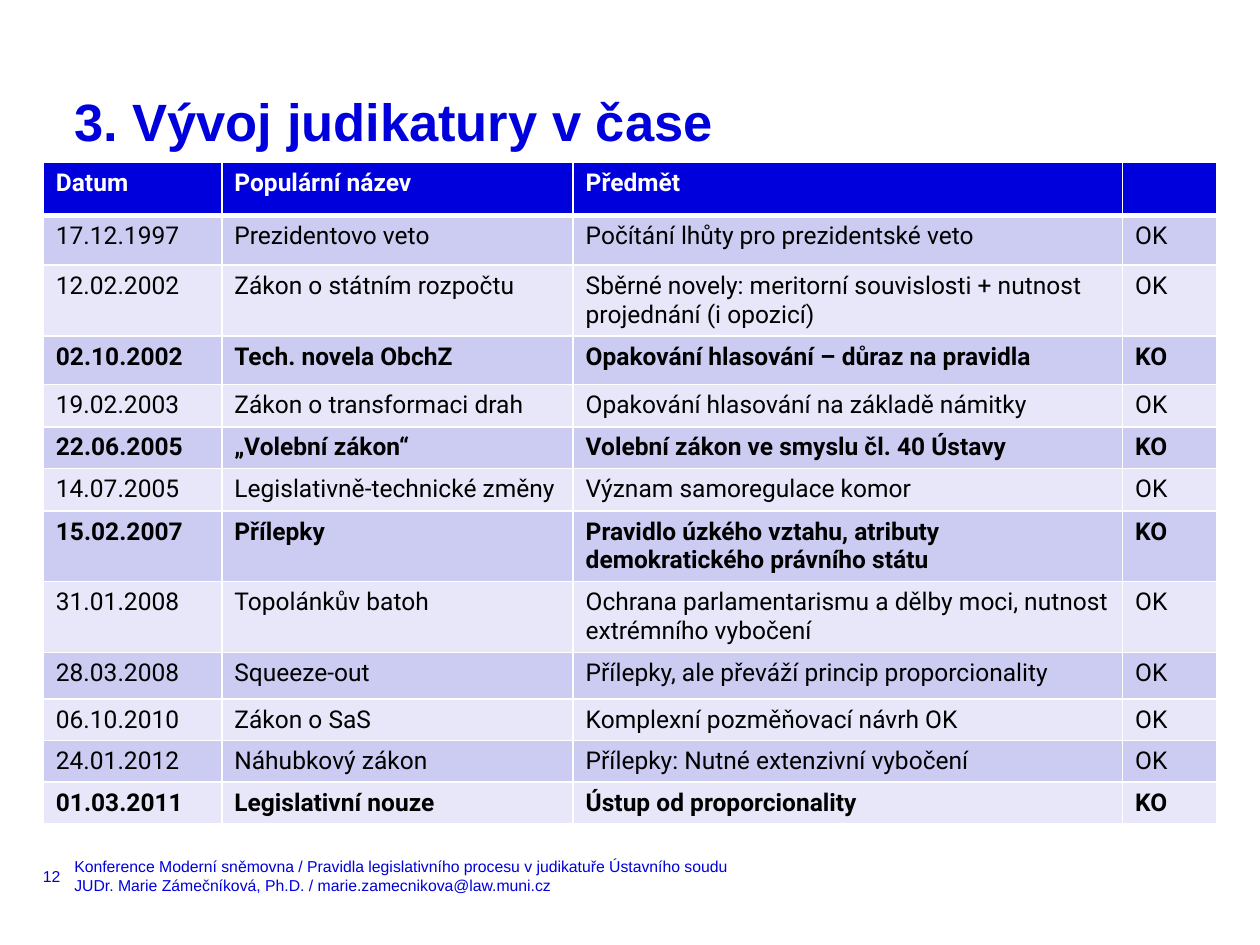
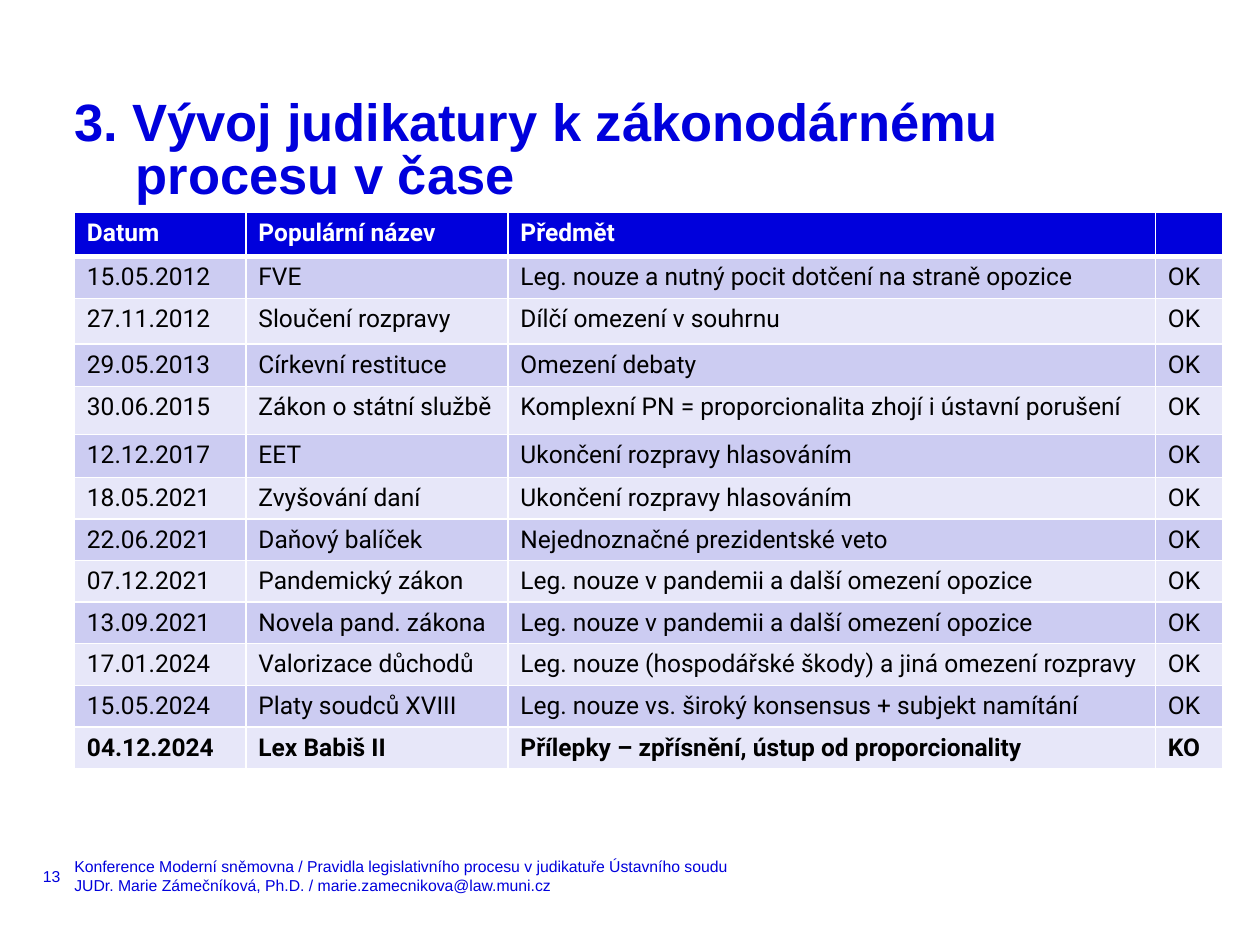
"""Build two slides that list case law on the legislative process in dated tables."""
from lxml import etree
from pptx import Presentation
from pptx.dml.color import RGBColor
from pptx.enum import text
from pptx.oxml import ns
from pptx.util import Pt

BLUE, WHITE, BLACK = "0000DC", "FFFFFF", "000000"
BANDS = ("CCCCF2", "E7E7F9")
HEADINGS = ("Datum", "Populární název", "Předmět", "")
FOOTER = (
    "Konference Moderní sněmovna / Pravidla legislativního procesu v judikatuře Ústavního soudu",
    "JUDr. Marie Zámečníková, Ph.D. / marie.zamecnikova@law.muni.cz",
)
ROW_HEIGHT = 23.75

EARLY_CASES = (
    ("17.12.1997", "Prezidentovo veto", "Počítání lhůty pro prezidentské veto", "OK"),
    ("12.02.2002", "Zákon o státním rozpočtu",
     "Sběrné novely: meritorní souvislosti + nutnost projednání (i opozicí)", "OK"),
    ("02.10.2002", "Tech. novela ObchZ", "Opakování hlasování – důraz na pravidla", "KO"),
    ("19.02.2003", "Zákon o transformaci drah", "Opakování hlasování na základě námitky", "OK"),
    ("22.06.2005", "„Volební zákon“", "Volební zákon ve smyslu čl. 40 Ústavy", "KO"),
    ("14.07.2005", "Legislativně-technické změny", "Význam samoregulace komor", "OK"),
    ("15.02.2007", "Přílepky",
     "Pravidlo úzkého vztahu, atributy demokratického právního státu", "KO"),
    ("31.01.2008", "Topolánkův batoh",
     "Ochrana parlamentarismu a dělby moci, nutnost extrémního vybočení", "OK"),
    ("28.03.2008", "Squeeze-out", "Přílepky, ale převáží princip proporcionality", "OK"),
    ("06.10.2010", "Zákon o SaS", "Komplexní pozměňovací návrh OK", "OK"),
    ("24.01.2012", "Náhubkový zákon", "Přílepky: Nutné extenzivní vybočení", "OK"),
    ("01.03.2011", "Legislativní nouze", "Ústup od proporcionality", "KO"),
)
EARLY_HEIGHTS = (30.75, 28.25, 40.5, 27.75, 24.25, ROW_HEIGHT, 24.25, 40.5, 40.5, 26.5,
                 ROW_HEIGHT, ROW_HEIGHT, ROW_HEIGHT)

LATE_CASES = (
    ("15.05.2012", "FVE", "Leg. nouze a nutný pocit dotčení na straně opozice", "OK"),
    ("27.11.2012", "Sloučení rozpravy", "Dílčí omezení v souhrnu", "OK"),
    ("29.05.2013", "Církevní restituce", "Omezení debaty", "OK"),
    ("30.06.2015", "Zákon o státní službě",
     "Komplexní PN = proporcionalita zhojí i ústavní porušení", "OK"),
    ("12.12.2017", "EET", "Ukončení rozpravy hlasováním", "OK"),
    ("18.05.2021", "Zvyšování daní", "Ukončení rozpravy hlasováním", "OK"),
    ("22.06.2021", "Daňový balíček", "Nejednoznačné prezidentské veto", "OK"),
    ("07.12.2021", "Pandemický zákon", "Leg. nouze v pandemii a další omezení opozice", "OK"),
    ("13.09.2021", "Novela pand. zákona", "Leg. nouze v pandemii a další omezení opozice", "OK"),
    ("17.01.2024", "Valorizace důchodů",
     "Leg. nouze (hospodářské škody) a jiná omezení rozpravy", "OK"),
    ("15.05.2024", "Platy soudců XVIII",
     "Leg. nouze vs. široký konsensus + subjekt namítání", "OK"),
    ("04.12.2024", "Lex Babiš II", "Přílepky – zpřísnění, ústup od proporcionality", "KO"),
)
LATE_HEIGHTS = (25.5, ROW_HEIGHT, 26, 24.5, 27.25, 24.5) + (ROW_HEIGHT,) * 7


def color(value):
    """Turn a hex string into a colour."""
    return RGBColor.from_string(value)


def style_font(paragraph, name, size, value, bold=False):
    """Set the font of a whole paragraph."""
    font = paragraph.font
    font.name, font.size, font.bold = name, Pt(size), bold
    font.color.rgb = color(value)


def prepare_frame(frame, anchor):
    """Give a text frame no margins, wrapping and an anchor."""
    frame.margin_left = frame.margin_top = frame.margin_right = frame.margin_bottom = 0
    frame.word_wrap = True
    frame.auto_size = text.MSO_AUTO_SIZE.NONE
    frame.vertical_anchor = anchor


def set_title(slide, title):
    """Place the title with a hanging indent."""
    shape = slide.shapes.title
    shape.left, shape.top, shape.width, shape.height = Pt(42.5), Pt(57), Pt(635), Pt(35.5)
    prepare_frame(shape.text_frame, text.MSO_ANCHOR.TOP)
    paragraph = shape.text_frame.paragraphs[0]
    paragraph.text = title
    paragraph.alignment = text.PP_ALIGN.LEFT
    paragraph.line_spacing = Pt(30)
    properties = paragraph._p.get_or_add_pPr()
    properties.set("marL", str(Pt(35)))
    properties.set("indent", str(-Pt(35)))
    style_font(paragraph, "Arial", 30, BLUE, True)


def add_footer_text(slide, left, width, lines):
    """Add small blue lines at the foot of the slide."""
    shape = slide.shapes.add_textbox(Pt(left), Pt(490.5), Pt(width), Pt(20))
    frame = shape.text_frame
    prepare_frame(frame, text.MSO_ANCHOR.MIDDLE)
    frame.text = "\n".join(lines)
    for paragraph in frame.paragraphs:
        style_font(paragraph, "Arial", 9, BLUE)


def set_borders(cell, top, bottom):
    """Draw white borders around a cell."""
    properties = cell._tc.get_or_add_tcPr()
    for side, width in (("L", 1), ("R", 1), ("T", top), ("B", bottom)):
        line = etree.SubElement(properties, ns.qn(f"a:ln{side}"), w=str(Pt(width)))
        fill = etree.SubElement(line, ns.qn("a:solidFill"))
        etree.SubElement(fill, ns.qn("a:srgbClr"), val=WHITE)


def fill_cell(cell, content, background, foreground, bold):
    """Write a table cell and colour it."""
    cell.fill.solid()
    cell.fill.fore_color.rgb = color(background)
    paragraph = cell.text_frame.paragraphs[0]
    paragraph.text = content
    style_font(paragraph, "Roboto", 14, foreground, bold)
    if not content:
        paragraph._p.get_or_add_endParaRPr().set("sz", "1400")


def add_case_table(slide, left, top, widths, heights, cases):
    """Add a table of cases, with overturned ones in bold."""
    frame = slide.shapes.add_table(len(heights), len(widths), Pt(left), Pt(top),
                                   Pt(sum(widths)), Pt(sum(heights)))
    table = frame.table
    for column, width in zip(table.columns, widths):
        column.width = Pt(width)
    for index, (height, contents) in enumerate(zip(heights, (HEADINGS, *cases))):
        table.rows[index].height = Pt(height)
        header = index == 0
        background = BLUE if header else BANDS[(index - 1) % 2]
        foreground = WHITE if header else BLACK
        bold = header or contents[-1] == "KO"
        for cell, content in zip(table.rows[index].cells, contents):
            set_borders(cell, 3 if index == 1 else 1, 3 if header else 1)
            fill_cell(cell, content, background, foreground, bold)


def add_case_slide(presentation, number, title, **table):
    """Add a slide with title, footer and case table."""
    slide = presentation.slides.add_slide(presentation.slide_layouts[5])
    set_title(slide, title)
    add_footer_text(slide, 42.5, 468, FOOTER)
    add_footer_text(slide, 24.5, 15, [str(number)])
    add_case_table(slide, **table)


def main():
    """Build and save the presentation."""
    presentation = Presentation()
    presentation.slide_width, presentation.slide_height = Pt(720), Pt(540)
    add_case_slide(presentation, 12, "3. Vývoj judikatury v čase",
                   left=24.75, top=92.5, widths=(102, 200.75, 314, 54),
                   heights=EARLY_HEIGHTS, cases=EARLY_CASES)
    add_case_slide(presentation, 13, "3. Vývoj judikatury k zákonodárnému procesu v čase",
                   left=42.5, top=121.25, widths=(98, 149.75, 370, 38.25),
                   heights=LATE_HEIGHTS, cases=LATE_CASES)
    presentation.save("out.pptx")


if __name__ == "__main__":
    main()
